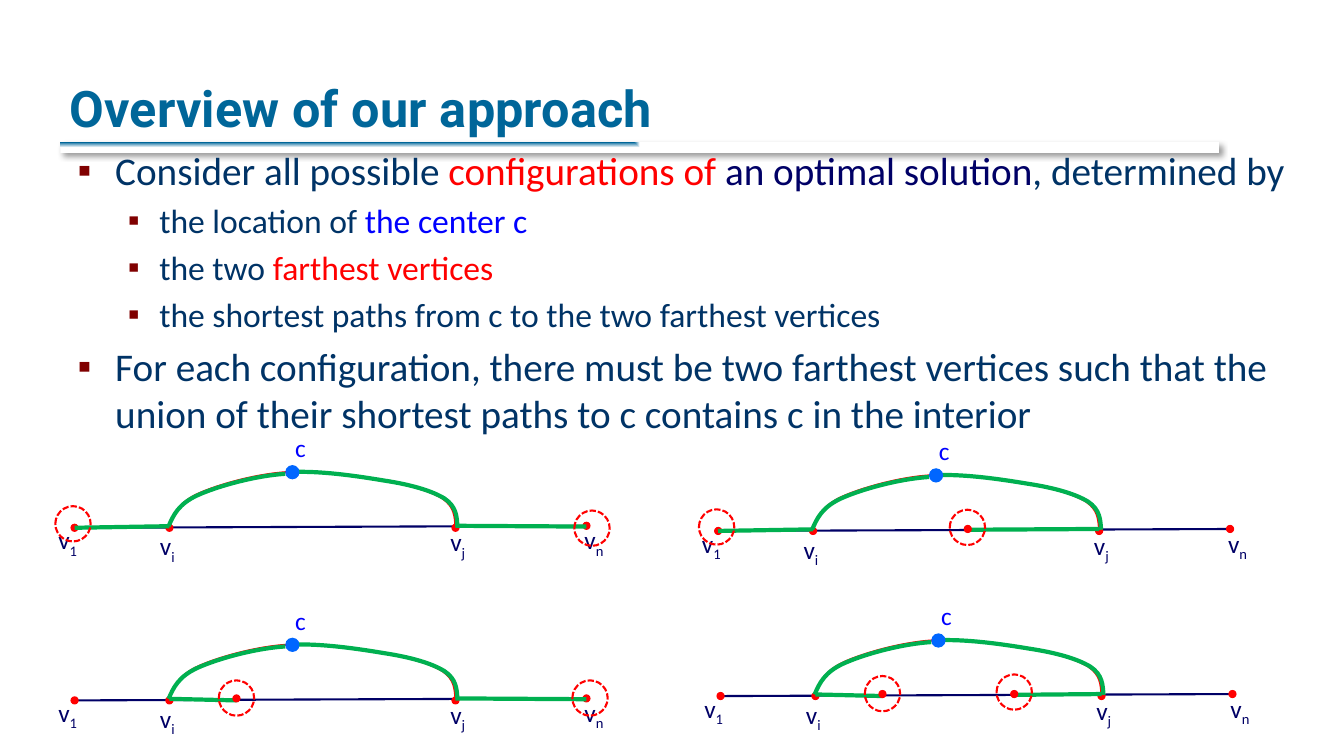
from pptx import Presentation
from pptx.util import Cm, Pt
from pptx.dml.color import RGBColor
from pptx.enum.dml import MSO_LINE
from pptx.enum.shapes import MSO_SHAPE, MSO_CONNECTOR
from pptx.enum.text import PP_ALIGN, MSO_ANCHOR, MSO_AUTO_SIZE
from pptx.oxml.ns import qn
from lxml.etree import SubElement

HUES = {
    "title": "006699", "body": "003366", "red": "FF0000", "navy": "000066",
    "blue": "0000FF", "green": "00B050", "dot": "0066FF",
    "mark": "800000", "white": "FFFFFF", "black": "000000",
}

# Each item: level, then runs of (text, colour)
ITEMS = [
    (0, [("Consider all possible ", "body"), ("configurations of ", "red"),
         ("an optimal solution", "navy"), (", determined by", "body")]),
    (1, [("the location of ", "body"), ("the center c", "blue")]),
    (1, [("the two ", "body"), ("farthest vertices", "red")]),
    (1, [("the shortest paths from c to the two farthest vertices", "body")]),
    (0, [("For each configuration, there must be two farthest vertices such "
          "that the union of their shortest paths to c contains c in the "
          "interior", "body")]),
]
LEVELS = [(28, 0.95, -0.95), (24, 2.06, -0.79)]  # size, margin, indent

# Graph geometry in cm, measured from vertex v1
VI, VJ, VN = 2.39, 9.6, 12.9
TOP = (5.49, -1.4)
ARC = [
    (2.39, -0.08), (2.51, -0.36), (2.64, -0.64), (3.12, -0.86),
    (3.63, -1.09), (4.57, -1.35), (5.33, -1.4),
    (6.1, -1.45), (7.09, -1.3), (7.75, -1.19),
    (8.41, -1.09), (8.94, -0.94), (9.27, -0.74),
    (9.58, -0.53), (9.58, -0.28), (9.6, -0.03),
]
LABELS = [  # text, subscript, left, top, width, colour
    ("v", "n", 12.6, -0.2, 1.02, "navy"), ("v", "1", -0.66, -0.2, 1.02, "navy"),
    ("v", "i", 1.9, -0.05, 0.89, "navy"), ("v", "j", 9.22, -0.15, 0.89, "navy"),
    ("c", "", 5.31, -2.53, 0.79, "blue"),
]
# Each graph: left and top of v1, then for both farthest vertices
# the place on the path and the centre of the ring
GRAPHS = [
    (1.88, 13.3, (0, -0.04, -0.1), (VN, 13.04, 0.01)),
    (18.1, 13.38, (0, -0.04, -0.1), (6.29, 6.28, -0.09)),
    (1.88, 17.65, (4.08, 4.08, -0.06), (VN, 12.99, -0.06)),
    (18.16, 17.54, (4.08, 4.08, -0.06), (7.4, 7.4, -0.1)),
]


def hue(name):
    return RGBColor.from_string(HUES[name])


def add_run(para, text, size, color, font="Calibri"):
    run = para.add_run()
    run.text = text
    run.font.size = Pt(size)
    run.font.name = font
    run.font.color.rgb = hue(color)
    return run


def place(shape, box):
    shape.left, shape.top, shape.width, shape.height = map(Cm, box)


def disc(slide, x, y, size, fill=None, line=None, width=0.75):
    half = size / 2
    shape = slide.shapes.add_shape(
        MSO_SHAPE.OVAL, Cm(x - half), Cm(y - half), Cm(size), Cm(size))
    shape.shadow.inherit = False
    if fill:
        shape.fill.solid()
        shape.fill.fore_color.rgb = hue(fill)
    else:
        shape.fill.background()
    if line:
        shape.line.color.rgb = hue(line)
        shape.line.width = Pt(width)
    else:
        shape.line.fill.background()
    return shape


def stroke(slide, points, color, width, bend=False):
    spots = [(Cm(x), Cm(y)) for x, y in points]
    pen = slide.shapes.build_freeform(*spots[0], scale=1.0)
    pen.add_line_segments(spots[1:], close=False)
    shape = pen.convert_to_shape()
    shape.shadow.inherit = False
    shape.fill.background()
    shape.line.color.rgb = hue(color)
    shape.line.width = Pt(width)
    if bend:
        # Every three points become one cubic curve
        legs = list(shape._element.iter(qn("a:lnTo")))
        track = legs[0].getparent()
        for at in range(0, len(legs), 3):
            cubic = SubElement(track, qn("a:cubicBezTo"))
            for leg in legs[at:at + 3]:
                cubic.append(leg[0])
                track.remove(leg)


def header(slide, box):
    x, y, w, h = box
    # Rule with a soft shadow, behind the text
    rule = slide.shapes.add_shape(
        MSO_SHAPE.RECTANGLE, Cm(x + 0.02), Cm(y + h - 0.02), Cm(29.21), Cm(0.28))
    rule.shadow.inherit = False
    rule.fill.gradient()
    for stop, color in zip(rule.fill.gradient_stops, ("title", "white")):
        stop.color.rgb = hue(color)
    blend = rule._element.spPr.find(qn("a:gradFill"))
    blend.remove(blend.find(qn("a:lin")))
    shade = SubElement(blend, qn("a:path"))
    shade.set("path", "rect")
    SubElement(shade, qn("a:fillToRect"), r="100000", b="100000")
    rule.line.fill.background()
    glow = SubElement(rule._element.spPr.find(qn("a:effectLst")),
                      qn("a:outerShdw"), blurRad=str(Pt(4)), dist=str(Pt(3)),
                      dir="2700000", algn="tl", rotWithShape="0")
    tint = SubElement(glow, qn("a:srgbClr"), val=HUES["black"])
    SubElement(tint, qn("a:alpha"), val="40000")
    slide.shapes._spTree.insert(2, rule._element)
    # Title
    title = slide.shapes.title
    place(title, box)
    frame = title.text_frame
    frame.auto_size = MSO_AUTO_SIZE.NONE
    frame.vertical_anchor = MSO_ANCHOR.BOTTOM
    para = frame.paragraphs[0]
    para.alignment = PP_ALIGN.LEFT
    run = add_run(para, "Overview of our approach", 36, "title", "Roboto")
    run.font.bold = True
    run._r.get_or_add_rPr().set("spc", "10")


def bullets(slide, box):
    body = slide.placeholders[1]
    place(body, box)
    frame = body.text_frame
    frame.auto_size = MSO_AUTO_SIZE.NONE
    for at, (level, runs) in enumerate(ITEMS):
        para = frame.add_paragraph() if at else frame.paragraphs[0]
        para.level = level
        size, margin, indent = LEVELS[level]
        props = para._p.get_or_add_pPr()
        props.set("marL", str(Cm(margin)))
        props.set("indent", str(Cm(indent)))
        tint = SubElement(props, qn("a:buClr"))
        SubElement(tint, qn("a:srgbClr"), val=HUES["mark"])
        SubElement(props, qn("a:buChar"), char="▪")
        for text, color in runs:
            add_run(para, text, size, color)


def label(slide, text, sub, box, color):
    note = slide.shapes.add_textbox(*map(Cm, box))
    note.text_frame.word_wrap = False
    para = note.text_frame.paragraphs[0]
    add_run(para, text, 18, color)
    if sub:
        run = add_run(para, sub, 18, color)
        run._r.get_or_add_rPr().set("baseline", "-25000")


def graph(slide, x, y, left, right):
    def shift(points, dx=0.0, dy=0.0):
        return [(x + a + dx, y + b + dy) for a, b in points]

    # Labels
    for text, sub, a, b, w, color in LABELS:
        label(slide, text, sub, (x + a, y + b, w, 1.02), color)
    # Base path and its vertices
    base = slide.shapes.add_connector(
        MSO_CONNECTOR.STRAIGHT, Cm(x), Cm(y), Cm(x + VN), Cm(y - 0.05))
    base.line.color.rgb = hue("navy")
    base.line.width = Pt(1.5)
    SubElement(base._element.spPr, qn("a:effectLst"))
    for spot in (0, VI, VJ, VN):
        disc(slide, x + spot, y - (0.05 if spot == VN else 0), 0.18, "red", "red")
    # Added edge and the two shortest paths
    stroke(slide, shift(ARC), "red", 1.5, True)
    stroke(slide, shift(ARC[:7], -0.02, 0.04), "green", 3, True)
    stroke(slide, shift(ARC[6:], 0.05), "green", 3, True)
    stroke(slide, shift([(left[0], 0), (VI, -0.04)]), "green", 3)
    stroke(slide, shift([(VJ, -0.05), (right[0], -0.03)]), "green", 3)
    # Center and farthest vertices
    disc(slide, x + TOP[0], y + TOP[1], 0.36, "dot")
    for far, a, b in (left, right):
        if far not in (0, VN):
            disc(slide, x + far, y - 0.05, 0.18, "red", "red")
        ring = disc(slide, x + a, y + b, 0.89, None, "red", 1.5)
        ring.line.dash_style = MSO_LINE.SQUARE_DOT


def main():
    deck = Presentation()
    deck.slide_width, deck.slide_height = Cm(33.87), Cm(19.05)
    slide = deck.slides.add_slide(deck.slide_layouts[1])
    header(slide, (1.5, 0.43, 28.78, 3.17))
    bullets(slide, (1.7, 3.56, 31.04, 4.39))
    for spot in GRAPHS:
        graph(slide, *spot)
    deck.save("out.pptx")


if __name__ == "__main__":
    main()
